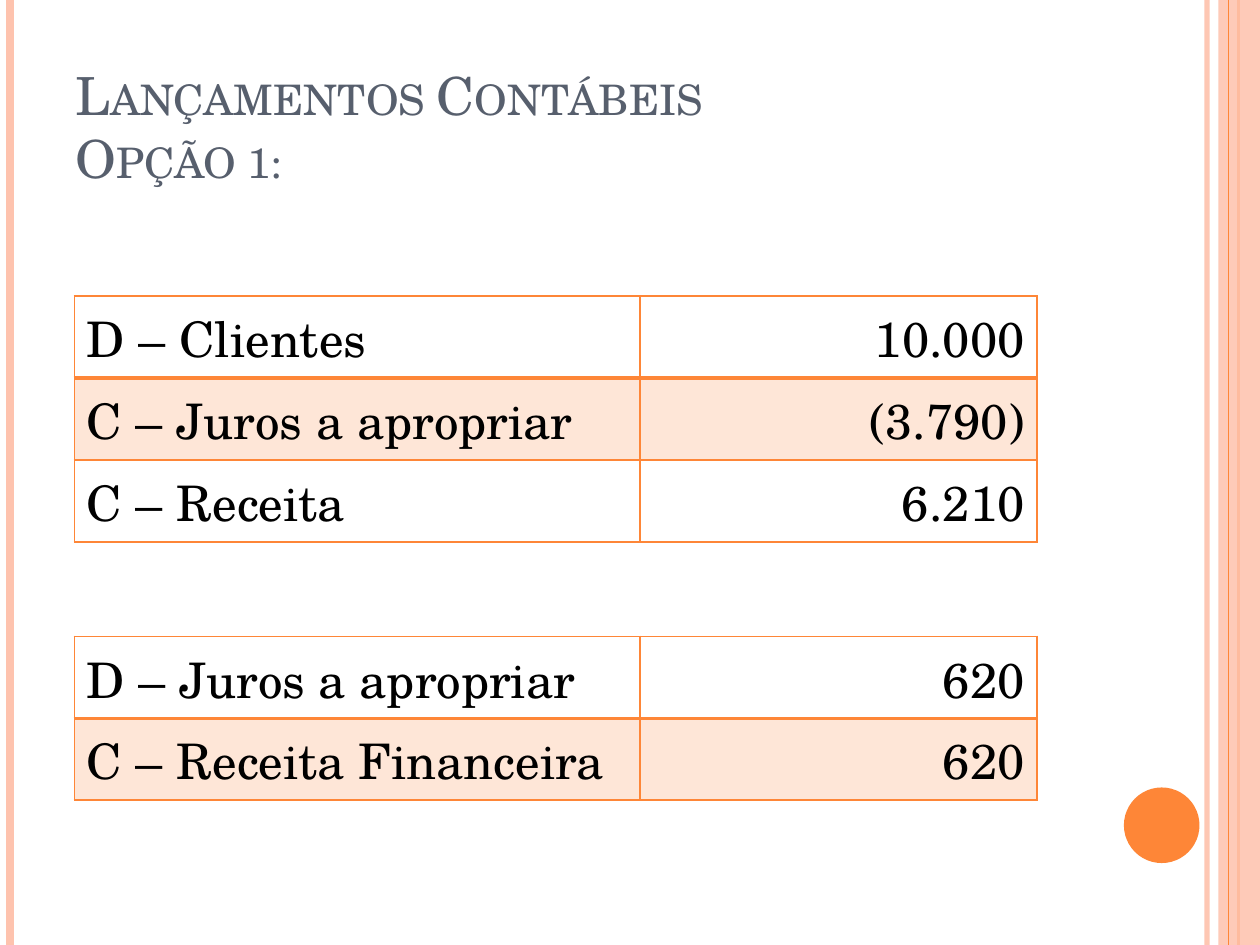
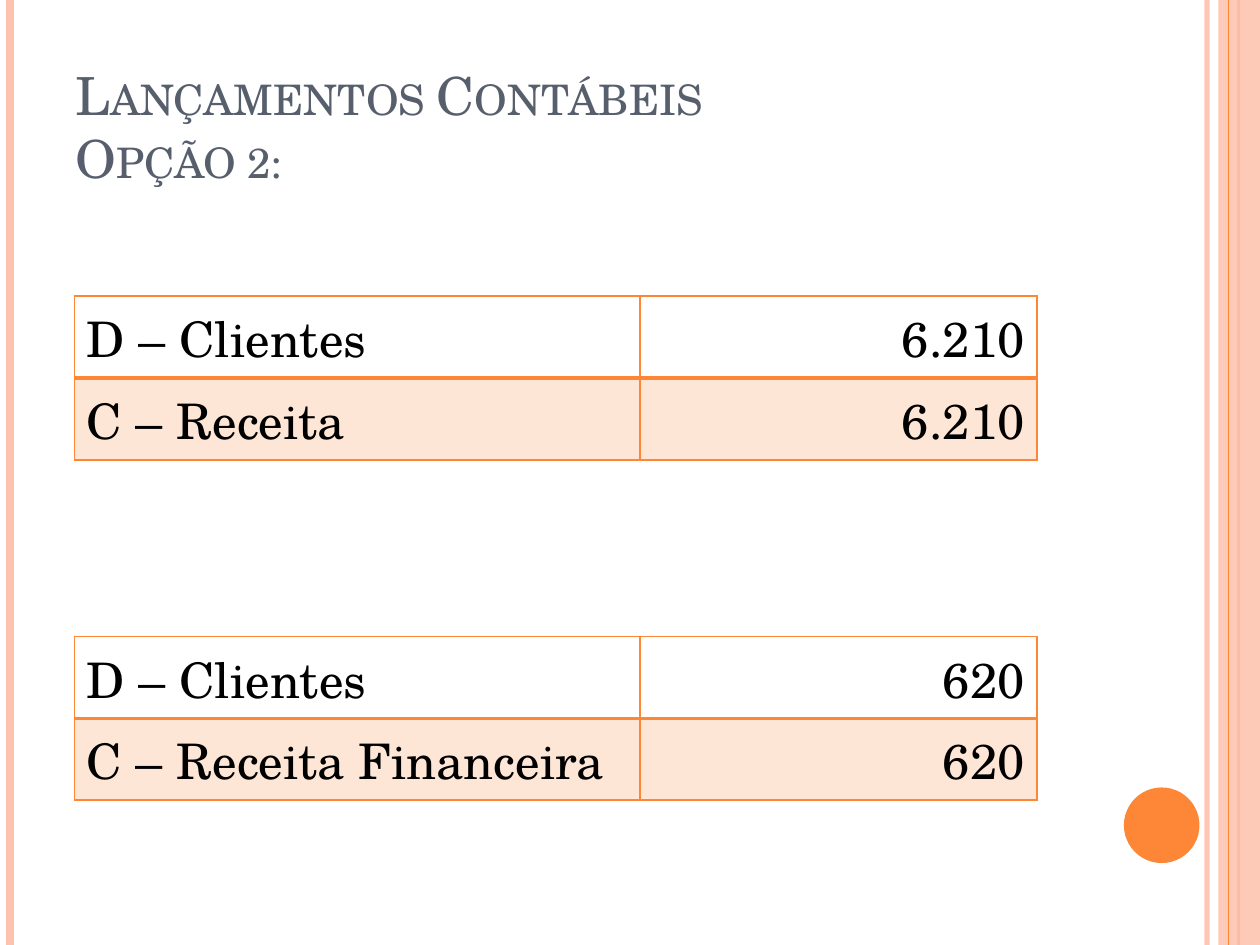
"""Builds two slides of accounting entries, one for each option."""
from lxml import etree
from pptx import Presentation
from pptx.dml.color import RGBColor
from pptx.enum.shapes import MSO_CONNECTOR, MSO_SHAPE
from pptx.enum.text import MSO_ANCHOR, PP_ALIGN
from pptx.oxml import parse_xml
from pptx.oxml.ns import nsdecls, qn
from pptx.util import Inches, Pt

LINE, RECT, OVAL = MSO_CONNECTOR.STRAIGHT, MSO_SHAPE.RECTANGLE, MSO_SHAPE.OVAL
BOTTOM, LEFT, RIGHT = MSO_ANCHOR.BOTTOM, PP_ALIGN.LEFT, PP_ALIGN.RIGHT
ORANGE, PEACH, SLATE, BLACK = "FE8637", "FEC3AE", "575F6D", "000000"
FONT = "TeX Gyre Schola"
W, H = Inches(10), Inches(7.5)
COLS, ROW_H = (Inches(4.49), Inches(3.15)), Inches(0.65)
TABLE_X, TABLE_TOPS = Inches(0.59), (Inches(2.35), Inches(5.05))

BARS = [(9.58, PEACH, 3, 93), (0.08, PEACH, 4.5, 100), (9.83, ORANGE, 1.5, 100)]
INNER_BAR = (9.75, ORANGE, 0.75, 100)
PANELS = [(RECT, 9.67, 0, 0.33, 7.5, PEACH, 87), (OVAL, 8.92, 6.25, 0.6, 0.6, ORANGE, 100)]

OPTIONS = [
    ("Opção 1:", [
        [("D – Clientes", "10.000"), ("C – Juros a apropriar", "(3.790)"), ("C – Receita", "6.210")],
        [("D – Juros a apropriar", "620"), ("C – Receita Financeira", "620")]]),
    ("Opção 2:", [
        [("D – Clientes", "6.210"), ("C – Receita", "6.210")],
        [("D – Clientes", "620"), ("C – Receita Financeira", "620")]]),
]


def paint(fill, color, alpha=100):
    """Give a fill a solid colour with an opacity in percent."""
    fill.solid()
    fill.fore_color.rgb = RGBColor.from_string(color)
    if alpha < 100:
        clr = fill._xPr.find(qn("a:solidFill"))[0]
        etree.SubElement(clr, qn("a:alpha")).set("val", str(alpha * 1000))


def add_run(p, text, size, color):
    """Add a run in the deck's font."""
    r = p.add_run()
    r.text = text
    r.font.size, r.font.name = Pt(size), FONT
    r.font.color.rgb = RGBColor.from_string(color)
    return r


prs = Presentation()
prs.slide_width, prs.slide_height = W, H

for option, tables in OPTIONS:
    s = prs.slides.add_slide(prs.slide_layouts[6])

    for item in BARS + PANELS[:1] + [INNER_BAR] + PANELS[1:]:
        if len(item) == 4:
            x, color, width, alpha = item
            sp = s.shapes.add_connector(LINE, Inches(x), 0, Inches(x), H)
            sp.line.width = Pt(width)
            paint(sp.line.fill, color, alpha)
            etree.SubElement(sp._element.spPr, qn("a:effectLst"))
        else:
            kind, x, y, w, h, color, alpha = item
            sp = s.shapes.add_shape(kind, Inches(x), Inches(y), Inches(w), Inches(h))
            sp.shadow.inherit = False
            sp.line.fill.background()
            paint(sp.fill, color, alpha)

    tf = s.shapes.add_textbox(Inches(0.5), Inches(0.3), Inches(8.17), Inches(1.25)).text_frame
    tf.word_wrap, tf.vertical_anchor = True, BOTTOM
    p = tf.paragraphs[0]
    for i, text in enumerate(("Lançamentos Contábeis", option)):
        if i:
            p.add_line_break()
        r = add_run(p, text, 30, SLATE)
        r.font._element.set("cap", "small")

    for top, entries in zip(TABLE_TOPS, tables):
        n = len(entries)
        table = s.shapes.add_table(n, 2, TABLE_X, top, sum(COLS), ROW_H * n).table
        table.first_row = table.horz_banding = False
        for col, width in zip(table.columns, COLS):
            col.width = width
        for i, entry in enumerate(entries):
            for j, text in enumerate(entry):
                cell = table.cell(i, j)
                p = cell.text_frame.paragraphs[0]
                p.alignment = (LEFT, RIGHT)[j]
                add_run(p, text, 28, BLACK)
                if i % 2:
                    paint(cell.fill, ORANGE, 20)
                else:
                    cell.fill.background()
                tcPr = cell._tc.get_or_add_tcPr()
                for k, side in enumerate("LRTB"):
                    under_first = (i, side) in ((0, "B"), (1, "T"))
                    width = Pt(2 if under_first else 1)
                    tcPr.insert(k, parse_xml(
                        f'<a:ln{side} {nsdecls("a")} w="{width}"><a:solidFill>'
                        f'<a:srgbClr val="{ORANGE}"/></a:solidFill></a:ln{side}>'))

prs.save("out.pptx")
